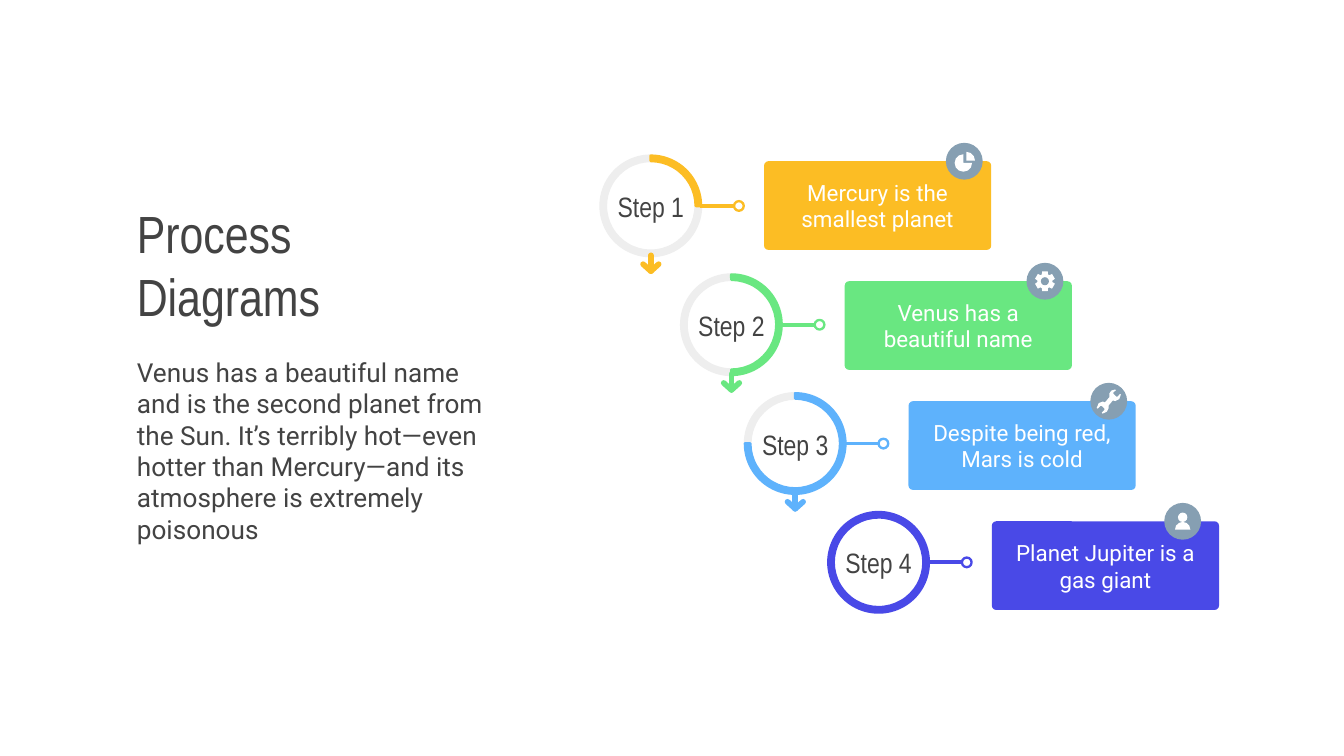
from math import cos, radians, sin

from pptx import Presentation
from pptx.dml.color import RGBColor
from pptx.enum.shapes import MSO_CONNECTOR, MSO_SHAPE
from pptx.enum.text import MSO_ANCHOR, PP_ALIGN
from pptx.oxml import parse_xml
from pptx.oxml.ns import nsdecls
from pptx.util import Inches, Pt

COLORS = {"yellow": "FCBD24", "green": "69E781", "blue": "5EB2FC", "indigo": "4949E7",
          "track": "EEEEEE", "badge": "869FB2", "white": "FFFFFF", "text": "434343"}
UNIT = Inches(0.1)  # side of one grid square: 100 columns by 56.25 rows

deck = Presentation()
deck.slide_width, deck.slide_height = 100 * UNIT, int(56.25 * UNIT)
page = deck.slides.add_slide(deck.slide_layouts[6])


def draw(form, left, top, width=0, height=0, fill=None, line=None, weight=1.5, adjust=()):
    """Add a preset shape, or an outline given as contours of points around (left, top)."""
    if isinstance(form, list):
        contours = [[((left + x) * UNIT, (top + y) * UNIT) for x, y in contour] for contour in form]
        builder = page.shapes.build_freeform(*contours[0][0])
        for number, contour in enumerate(contours):
            if number:
                builder.move_to(*contour[0])
            builder.add_line_segments(contour[1:], close=fill is not None)
        shape = builder.convert_to_shape()
    else:
        shape = page.shapes.add_shape(form, *(int(n * UNIT) for n in (left, top, width, height)))
        for number, value in enumerate(adjust):
            shape.adjustments[number] = value
    shape.shadow.inherit = False
    if fill:
        shape.fill.solid()
        shape.fill.fore_color.rgb = RGBColor.from_string(COLORS[fill])
    else:
        shape.fill.background()
    if line:
        shape.line.color.rgb = RGBColor.from_string(COLORS[line])
        shape.line.width = Pt(weight)
    else:
        shape.line.fill.background()
    return shape


def write(box, text, size, font="Roboto", color="text", align=PP_ALIGN.CENTER,
          anchor=MSO_ANCHOR.MIDDLE):
    frame = box.text_frame
    frame.word_wrap = True
    frame.vertical_anchor = anchor
    frame.margin_left = frame.margin_right = frame.margin_top = frame.margin_bottom = UNIT
    para = frame.paragraphs[0]
    para.alignment = align
    span = para.add_run()
    span.text = text
    span.font.size = Pt(size)
    span.font.name = font
    span.font.color.rgb = RGBColor.from_string(COLORS[color])


# Heading and body text
title = page.shapes.add_textbox(*(int(n * UNIT) for n in (9.2, 15, 27.2, 9.3)))
write(title, "Process Diagrams", 28, font="Arial Narrow", align=PP_ALIGN.LEFT)
body = page.shapes.add_textbox(*(int(n * UNIT) for n in (9.2, 25.5, 28.8, 15.8)))
write(body, "Venus has a beautiful name and is the second planet from the Sun. "
      "It’s terribly hot—even hotter than Mercury—and its atmosphere is extremely poisonous",
      14, align=PP_ALIGN.LEFT, anchor=MSO_ANCHOR.TOP)

# Outlines, in grid squares around their centre
GEAR = [[(radius * cos(radians(tooth + turn)), radius * sin(radians(tooth + turn)))
         for tooth in range(30, 390, 60)
         for turn, radius in ((-24, 0.56), (-16, 0.76), (16, 0.76), (24, 0.56))]]
WRENCH = [[(0.48, -0.88), (0.2, -0.8), (0.04, -0.58), (0.04, -0.3), (-0.28, 0.08), (-0.45, 0.02),
           (-0.75, 0.14), (-0.9, 0.5), (-0.82, 0.54), (-0.62, 0.34), (-0.5, 0.36), (-0.32, 0.54),
           (-0.32, 0.64), (-0.52, 0.84), (-0.46, 0.92), (-0.15, 0.78), (0, 0.5), (0, 0.3),
           (0.3, -0.06), (0.5, -0.02), (0.78, -0.16), (0.9, -0.5), (0.83, -0.54), (0.65, -0.34),
           (0.54, -0.36), (0.34, -0.56), (0.34, -0.66), (0.53, -0.82)]]
ARROW = [[(0, 0), (0, 1.18)], [(-0.58, 0.66), (0, 1.18), (0.58, 0.66)]]

# Icon pieces: form, left, top, width, height, fill, adjustments; angles are degrees * 0.6
PIE_ICON = [(MSO_SHAPE.PIE, -0.72, -0.52, 1.3, 1.3, "white", (0, 162)),
            (MSO_SHAPE.PIE, -0.5, -0.7, 1.3, 1.3, "white", (162, 0))]
GEAR_ICON = [(GEAR, 0, 0, 0, 0, "white", ()),
             (MSO_SHAPE.OVAL, -0.3, -0.3, 0.6, 0.6, "badge", ())]
WRENCH_ICON = [(WRENCH, 0, 0, 0, 0, "white", ())]
PERSON_ICON = [(MSO_SHAPE.OVAL, -0.35, -0.65, 0.7, 0.7, "white", ()),
               (MSO_SHAPE.PIE, -0.57, 0.05, 1.14, 1.14, "white", (108, 0))]

# Steps: ring's left edge, colour, card text, badge's distance from the card's left, icon
STEPS = [(44.7, "yellow", "Mercury is the smallest planet", 14.9, PIE_ICON),
         (50.7, "green", "Venus has a beautiful name", 14.9, GEAR_ICON),
         (55.45, "blue", "Despite being red, Mars is cold", 14.9, WRENCH_ICON),
         (61.65, "indigo", "Planet Jupiter is a gas giant", 14.2, PERSON_ICON)]
RING, RIM = 7.45, 0.05
CARD_WIDTH, CARD_HEIGHT, BADGE = 16.9, 6.6, 2.74

for index, (left, color, text, badge_offset, icon) in enumerate(STEPS):
    number = index + 1
    top = 11.6 + 8.84 * index
    middle = top + RING / 2
    center = left + RING / 2

    # Progress ring: each step fills one more quarter, clockwise from the top
    if number < len(STEPS):
        end = (270 + 90 * number) % 360 * 0.6
        draw(MSO_SHAPE.BLOCK_ARC, left, top, RING, RING, "track", "track", adjust=(end, 162, RIM))
        draw(MSO_SHAPE.BLOCK_ARC, left, top, RING, RING, color, color, adjust=(162, end, RIM))
        arrow = draw(ARROW, center, top + 7.4, line=color, weight=3)
        arrow.line._get_or_add_ln().set("cap", "rnd")
    else:
        draw(MSO_SHAPE.DONUT, left, top, RING, RING, color, color, adjust=(RIM,))
    label = page.shapes.add_textbox(*(int(n * UNIT) for n in (left, top + 2.1, RING, 3.3)))
    write(label, f"Step {number}", 15, font="Arial Narrow")

    # Link with an open end
    link = page.shapes.add_connector(MSO_CONNECTOR.STRAIGHT, *(
        int(n * UNIT) for n in (left + 7.35, middle, left + 9.95, middle)))
    link.line.color.rgb = RGBColor.from_string(COLORS[color])
    link.line.width = Pt(2)
    link._element.spPr.append(parse_xml(f"<a:effectLst {nsdecls('a')}/>"))
    draw(MSO_SHAPE.OVAL, left + 9.92, middle - 0.36, 0.72, 0.72, "white", color, 1.25)

    # Card with its badge
    card_left, card_top = left + 12.15, 12 + 8.93 * index
    card = draw(MSO_SHAPE.ROUNDED_RECTANGLE, card_left, card_top, CARD_WIDTH, CARD_HEIGHT,
                color, adjust=(0.05,))
    write(card, text, 12, color="white")
    badge_x = card_left + badge_offset
    draw(MSO_SHAPE.OVAL, badge_x - BADGE / 2, card_top - BADGE / 2, BADGE, BADGE, "badge")
    for form, x, y, width, height, fill, adjust in icon:
        draw(form, badge_x + x, card_top + y, width, height, fill, adjust=adjust)

deck.save("out.pptx")
